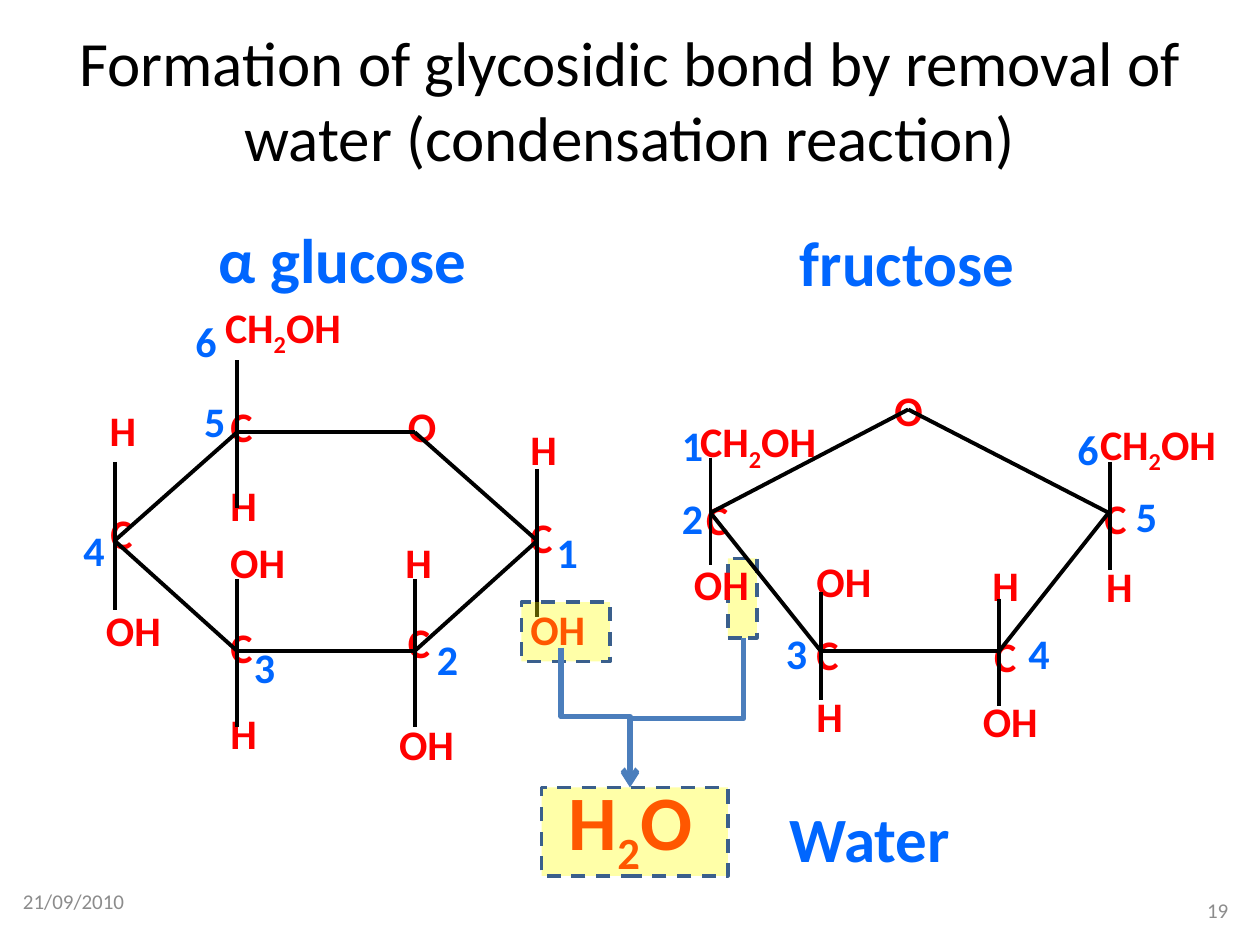
"""Build the slide on forming a glycosidic bond by condensation."""
from dataclasses import dataclass
from itertools import groupby

from pptx import Presentation
from pptx.dml.color import RGBColor
from pptx.enum import dml, shapes, text
from pptx.oxml.ns import qn
from pptx.util import Pt


@dataclass(frozen=True)
class Theme:
    """Colours, font and type sizes of the slide."""
    font: str = "Calibri"
    ink: str = "000000"
    atom: str = "FF0000"
    accent: str = "0066FF"
    muted: str = "8C8C8C"
    marker: str = "FFFF00"
    marker_edge: str = "3A5F8C"
    flow: str = "4B7EBC"
    heading: int = 36
    formula: int = 44
    label: int = 24
    footer: int = 12


THEME = Theme()

GLUCOSE = dict(
    ring=[(25.5, 141), (95.5, 79), (197, 79), (267, 141), (197, 204), (95.5, 204)],
    stems=[(95.5, 38), (25.5, 96), (95.5, 163), (197, 163), (267, 100)],
    stem_length=84.5,
    sizes={"C": (32, 32), "H": (37.5, 32), "O": (21.5, 32), "OH": (64, 32),
           "CH2OH": (110, 32), "number": (32, 32)},
    labels={
        "C": [(256, 120.5), (186, 181), (16, 118.5), (84.5, 57.5), (84.5, 183.5)],
        "CH2OH": [(81.5, 0.5)],
        "OH": [(13.5, 174), (181, 239), (256, 173.5), (84.5, 135)],
        "H": [(15.5, 59.5), (84.5, 102.5), (84.5, 233), (184.5, 135), (256, 70.5)],
        "O": [(186, 57.5)],
    },
    numbers=[(271, 129.5), (202.5, 190.5), (98, 195), (0.5, 128), (69.5, 54.5), (64.5, 9)],
)

FRUCTOSE = dict(
    ring=[(24, 77), (137, 18), (251.5, 77), (189, 156), (87, 156)],
    stems=[(24, 45.5), (252.5, 48), (87, 122.5), (189, 126)],
    stem_length=61.5,
    sizes={"C": (20, 20), "H": (20, 20), "O": (48, 36), "OH": (53, 36),
           "CH2OH": (90, 36), "number": (18, 20)},
    labels={
        "C": [(14.5, 62.5), (242, 62), (179, 141), (77.5, 139.5)],
        "CH2OH": [(239.5, 19.5), (11, 18)],
        "OH": [(7.5, 99.5), (172.5, 178), (77.5, 98)],
        "H": [(243, 101), (77.5, 175), (178, 100)],
        "O": [(122, 0)],
    },
    numbers=[(0.5, 20), (0.5, 62), (60, 139), (198.5, 139), (260, 61), (226.5, 22.5)],
)


def style(font, size, color, bold=False):
    """Give a font its face, size, colour and weight."""
    font.name, font.size, font.bold = THEME.font, Pt(size), bold
    font.color.rgb = RGBColor.from_string(color)


def add_label(parent, wording, box, size, color, bold=True):
    """Add a text box, lowering the digits that stand inside a formula."""
    label = parent.add_textbox(*map(Pt, box))
    frame = label.text_frame
    frame.word_wrap = True
    frame.auto_size = text.MSO_AUTO_SIZE.SHAPE_TO_FIT_TEXT
    paragraph = frame.paragraphs[0]
    is_formula = wording.startswith(("CH", "H2"))
    parts = groupby(wording, str.isdigit) if is_formula else [(False, wording)]
    for lowered, letters in parts:
        run = paragraph.add_run()
        run.text = "".join(letters)
        style(run.font, size, color, bold)
        if lowered:
            run.font._element.set("baseline", "-25000")
    return label


def add_line(parent, start, end, color, width, kind=shapes.MSO_CONNECTOR.STRAIGHT):
    """Join two points with a plain line."""
    line = parent.add_connector(kind, *map(Pt, (*start, *end)))
    line.line.color.rgb = RGBColor.from_string(color)
    line.line.width = Pt(width)
    properties = line._element.spPr
    properties.append(properties.makeelement(qn("a:effectLst"), {}))
    return line


def add_flow(parent, start, end, bend):
    """Add an arrow that leaves downwards, turns at the bend and ends downwards."""
    (x1, y1), (x2, y2) = start, end
    middle_x, middle_y = (x1 + x2) / 2, (y1 + y2) / 2
    half_w, half_h = (y2 - y1) / 2, abs(x2 - x1) / 2
    side, turn = (1, 270) if x2 > x1 else (-1, 90)
    arrow = add_line(parent, (middle_x + side * half_w, middle_y - half_h),
                     (middle_x - side * half_w, middle_y + half_h),
                     THEME.flow, 3, shapes.MSO_CONNECTOR.ELBOW)
    properties = arrow._element.spPr
    properties.find(qn("a:xfrm")).set("rot", str(turn * 60000))
    adjustments = properties.find(qn("a:prstGeom")).get_or_add_avLst()
    adjustments.append(adjustments.makeelement(
        qn("a:gd"), {"name": "adj1", "fmla": f"val {round(bend * 100000)}"}))
    outline = properties.find(qn("a:ln"))
    outline.append(outline.makeelement(qn("a:tailEnd"), {"type": "arrow"}))


def add_marker(parent, box):
    """Add a see-through highlight with a dashed edge."""
    marker = parent.add_shape(shapes.MSO_SHAPE.RECTANGLE, *map(Pt, box))
    marker.shadow.inherit = False
    marker.fill.solid()
    marker.fill.fore_color.rgb = RGBColor.from_string(THEME.marker)
    color = marker._element.spPr.find(qn("a:solidFill"))[0]
    color.append(color.makeelement(qn("a:alpha"), {"val": "34000"}))
    marker.line.color.rgb = RGBColor.from_string(THEME.marker_edge)
    marker.line.width = Pt(2)
    marker.line.dash_style = dml.MSO_LINE.DASH


def add_sugar(slide, left, top, sugar):
    """Draw one sugar ring as a group with its atoms, numbers and bonds."""
    group = slide.shapes.add_group_shape().shapes

    def place(point):
        return left + point[0], top + point[1]

    for atom, spots in sugar["labels"].items():
        for spot in spots:
            add_label(group, atom, (*place(spot), *sugar["sizes"][atom]),
                      THEME.label, THEME.atom)
    for number, spot in enumerate(sugar["numbers"], 1):
        add_label(group, str(number), (*place(spot), *sugar["sizes"]["number"]),
                  THEME.label, THEME.accent)
    ring = sugar["ring"]
    bonds = list(zip(ring, ring[1:] + ring[:1]))
    bonds += [((x, y), (x, y + sugar["stem_length"])) for x, y in sugar["stems"]]
    for start, end in bonds:
        add_line(group, place(start), place(end), THEME.ink, 2.25)


def add_water(slide, left, top):
    """Mark the groups that leave and lead them to the water formed."""
    parent = slide.shapes
    for x, y, width, height in [(0, 25, 50.5, 34), (118, 0, 16.5, 45.5)]:
        add_marker(parent, (left + x, top + y, width, height))
    add_flow(parent, (left + 22.5, top + 51), (left + 62, top + 130), 0.5)
    add_flow(parent, (left + 127, top + 45.5), (left + 62, top + 131), 0.54)
    add_label(parent, "H2O", (left + 20, top + 119.5, 98, 60.5), THEME.formula, THEME.atom)
    add_marker(parent, (left + 11.5, top + 131, 106.5, 50.5))


def add_headings(slide):
    """Set the title and the names of the three substances."""
    title = slide.shapes.title
    title.left, title.top, title.width, title.height = map(Pt, (36, 11.5, 648, 90))
    frame = title.text_frame
    frame.text = "Formation of glycosidic bond by removal of water (condensation reaction)"
    frame.vertical_anchor = text.MSO_ANCHOR.MIDDLE
    frame.word_wrap = True
    frame.auto_size = text.MSO_AUTO_SIZE.NONE
    frame.paragraphs[0].alignment = text.PP_ALIGN.CENTER
    style(frame.paragraphs[0].runs[0].font, THEME.heading, THEME.ink)
    for name, left, top in [("α glucose", 118, 122.5), ("fructose", 450, 124),
                            ("Water", 444, 453.5)]:
        add_label(slide.shapes, name, (left, top, 160, 51), THEME.heading, THEME.accent)


def add_footer(slide):
    """Add the date on the left and the page number on the right."""
    for wording, box, side in [
            ("21/09/2010", (6, 500.5, 168, 29), text.PP_ALIGN.LEFT),
            ("19", (669.5, 505.5, 39.5, 29), text.PP_ALIGN.RIGHT)]:
        note = add_label(slide.shapes, wording, box, THEME.footer, THEME.muted, bold=False)
        note.text_frame.auto_size = text.MSO_AUTO_SIZE.NONE
        note.text_frame.vertical_anchor = text.MSO_ANCHOR.MIDDLE
        note.text_frame.paragraphs[0].alignment = side


def main():
    """Build and save the slide."""
    deck = Presentation()
    deck.slide_width, deck.slide_height = Pt(720), Pt(540)
    slide = deck.slides.add_slide(deck.slide_layouts[5])
    add_headings(slide)
    add_footer(slide)
    add_sugar(slide, 40, 168, GLUCOSE)
    add_water(slide, 298, 319)
    add_sugar(slide, 382, 216, FRUCTOSE)
    deck.save("out.pptx")


if __name__ == "__main__":
    main()
